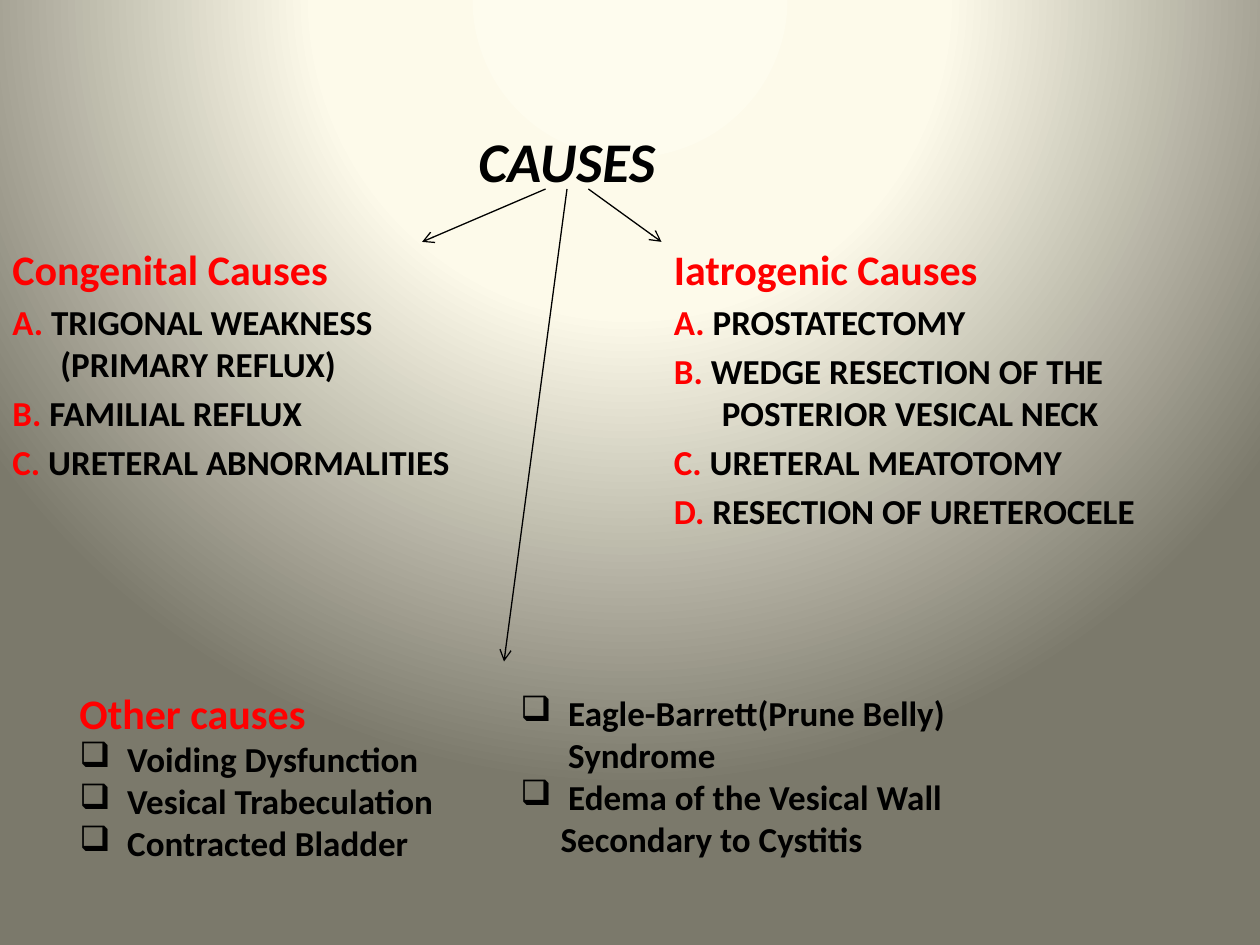
import pptx
import pptx.dml.color
import pptx.enum.shapes
import pptx.enum.text
import pptx.util
from lxml import etree
from pptx.oxml.ns import qn

Inches = pptx.util.Inches
Pt = pptx.util.Pt
ANCHOR = pptx.enum.text.MSO_ANCHOR
ALIGN = pptx.enum.text.PP_ALIGN
RED, BLACK = "FF0000", "000000"


def rgb(value):
    return pptx.dml.color.RGBColor.from_string(value)


def apply(target, values):
    for name, value in values.items():
        setattr(target, name, value)


class CausesSlide:
    font = "Calibri"
    heading_size, item_size = 24, 20
    indent = 0.38
    line_width = 0.75

    def __init__(self, slide):
        self.slide = slide

    def background(self, stops, focus):
        """Fill the background with a circular gradient of (percent, colour) stops."""
        fill = self.slide.background.fill
        fill.gradient()
        gradient = self.slide.background._cSld.find(".//" + qn("a:gradFill"))
        for child in list(gradient):
            gradient.remove(child)
        stop_list = etree.SubElement(gradient, qn("a:gsLst"))
        for percent, colour in stops:
            stop = etree.SubElement(stop_list, qn("a:gs"), pos=str(percent * 1000))
            etree.SubElement(stop, qn("a:srgbClr"), val=colour)
        circle = etree.SubElement(gradient, qn("a:path"), path="circle")
        sides = {side: str(percent * 1000) for side, percent in zip("ltrb", focus)}
        etree.SubElement(circle, qn("a:fillToRect"), **sides)

    def frame(self, box, anchor=ANCHOR.TOP, side=0.1, top=0.05):
        text_frame = self.slide.shapes.add_textbox(*map(Inches, box)).text_frame
        apply(text_frame, {
            "word_wrap": True, "vertical_anchor": anchor,
            "margin_left": Inches(side), "margin_right": Inches(side),
            "margin_top": Inches(top), "margin_bottom": Inches(0.05),
        })
        return text_frame

    def paragraph(self, frame, runs, size, before=0, left=None, hanging=True,
                  bullet=None, align=ALIGN.LEFT, italic=False):
        """Add one paragraph of (text, colour) runs; a newline breaks the line."""
        first = frame.paragraphs[0]
        para = frame.add_paragraph() if first.runs else first
        apply(para, {"alignment": align, "space_before": Pt(before)})
        if left is not None:
            props = para._p.get_or_add_pPr()
            props.set("marL", str(Inches(left)))
            props.set("indent", str(-Inches(left) if hanging else 0))
            if bullet:
                etree.SubElement(props, qn("a:buChar"), char=bullet)
        for text, colour in runs:
            for number, line in enumerate(text.split("\n")):
                if number:
                    para.add_line_break()
                run = para.add_run()
                run.text = line
                apply(run.font, {"name": self.font, "size": Pt(size),
                                 "bold": True, "italic": italic})
                run.font.color.rgb = rgb(colour)

    def title(self, box, text):
        self.paragraph(self.frame(box, ANCHOR.MIDDLE), [(text, BLACK)], 32,
                       align=ALIGN.CENTER, italic=True)

    def heading(self, frame, text, before=0):
        self.paragraph(frame, [(text, RED)], self.heading_size, before, self.indent)

    def lettered_list(self, box, heading, causes):
        frame = self.frame(box)
        self.heading(frame, heading, before=4.8)
        for letter, cause in zip("ABCD", causes):
            self.paragraph(frame, [(letter + ".", RED), (" " + cause, BLACK)],
                           self.item_size, 4, self.indent)

    def checklist(self, frame, causes):
        for cause in causes:
            self.paragraph(frame, [(cause, BLACK)], self.item_size,
                           left=self.indent, bullet="❑")

    def arrow(self, start, end):
        line = self.slide.shapes.add_connector(
            pptx.enum.shapes.MSO_CONNECTOR.STRAIGHT, *map(Inches, start + end))
        line.line.color.rgb = rgb(BLACK)
        line.line.width = Pt(self.line_width)
        etree.SubElement(line.line._get_or_add_ln(), qn("a:tailEnd"), type="arrow")
        etree.SubElement(line._element.spPr, qn("a:effectLst"))


def main():
    deck = pptx.Presentation()
    apply(deck, {"slide_width": Inches(10), "slide_height": Inches(7.5)})
    page = CausesSlide(deck.slides.add_slide(deck.slide_layouts[6]))
    page.background([(0, "FEFCEE"), (40, "FDFAEA"), (100, "7B796B")],
                    (50, -80, 50, 180))

    # Iatrogenic and congenital causes
    page.lettered_list((5.25, 1.88, 4.75, 3.04), "Iatrogenic Causes", [
        "PROSTATECTOMY",
        "WEDGE RESECTION OF THE POSTERIOR VESICAL NECK",
        "URETERAL MEATOTOMY",
        "RESECTION OF URETEROCELE",
    ])
    page.lettered_list((0, 1.88, 4.42, 4.95), "Congenital Causes", [
        "TRIGONAL WEAKNESS\n(PRIMARY REFLUX)",
        "FAMILIAL REFLUX",
        "URETERAL ABNORMALITIES",
    ])

    # Title
    page.title((0, 0.29, 9, 1.96), "CAUSES")

    # Other causes, in two columns
    other = page.frame((0.58, 5.23, 3.42, 1.85), ANCHOR.MIDDLE, side=0.05)
    page.heading(other, "Other causes")
    page.checklist(other, ["Voiding Dysfunction", "Vesical Trabeculation",
                           "Contracted Bladder"])
    more = page.frame((4.08, 5.39, 4.83, 1.86), side=0.05, top=0.1)
    page.checklist(more, ["Eagle-Barrett(Prune Belly)\nSyndrome",
                          "Edema of the Vesical Wall"])
    page.paragraph(more, [("Secondary to Cystitis", BLACK)], page.item_size,
                   left=0.32, hanging=False)

    # Arrows from the title to each group
    for start_x, end in [(4.5, (4, 5.25)), (4.33, (3.35, 1.92)), (4.67, (5.25, 1.92))]:
        page.arrow((start_x, 1.5), end)

    deck.save("out.pptx")


if __name__ == "__main__":
    main()
